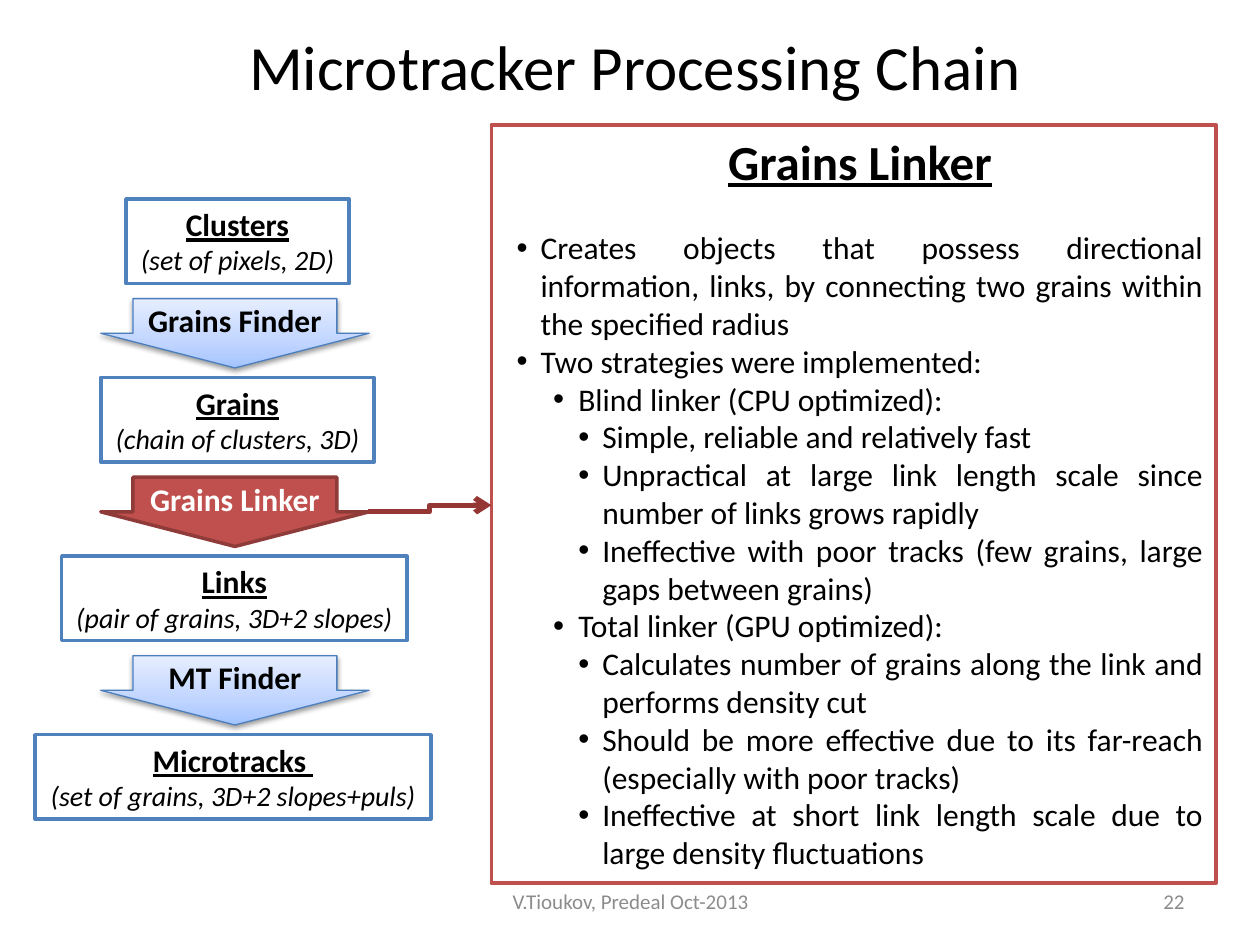
"""Build the Microtracker Processing Chain slide."""
from lxml.etree import SubElement
from pptx import Presentation
from pptx.dml.color import RGBColor
from pptx.enum.shapes import MSO_CONNECTOR, MSO_SHAPE
from pptx.enum.text import MSO_ANCHOR, MSO_AUTO_SIZE, PP_ALIGN
from pptx.oxml.ns import qn
from pptx.util import Inches, Pt

COLORS = {
    "black": "000000", "white": "FFFFFF", "gray": "8C8C8C",
    "blue": "4F81BD", "arrow_blue": "4B7EBC",
    "red": "C0504D", "dark_red": "8E3B39", "connector": "953735",
}
GRADIENT = [(0, "A4C4FF"), (35, "BFD4FF"), (100, "E6EEFF")]
ROW_TOP, ROW_STEP, ARROW_OFFSET = 1.58, 1.417, 0.79
DATA_BOXES = [
    ("Clusters", "(set of pixels, 2D)", 1, 1.77),
    ("Grains", "(chain of clusters, 3D)", 0.8, 2.17),
    ("Links", "(pair of grains, 3D+2 slopes)", 0.49, 2.74),
    ("Microtracks ", "(set of grains, 3D+2 slopes+puls)", 0.28, 3.14),
]
STEPS = [("Grains Finder", False), ("Grains Linker", True), ("MT Finder", False)]
INDENTS = [(0.29, -0.19), (0.59, -0.2), (0.78, -0.19)]
LINKER_POINTS = [
    (0, "Creates objects that possess directional information, links, "
        "by connecting two grains within the specified radius"),
    (0, "Two strategies were implemented:"),
    (1, "Blind linker (CPU optimized):"),
    (2, "Simple, reliable and relatively fast"),
    (2, "Unpractical at large link length scale since number of links grows rapidly"),
    (2, "Ineffective with poor tracks (few grains, large gaps between grains)"),
    (1, "Total linker (GPU optimized):"),
    (2, "Calculates number of grains along the link and performs density cut"),
    (2, "Should be more effective due to its far-reach (especially with poor tracks)"),
    (2, "Ineffective at short link length scale due to large density fluctuations"),
]


def rgb(name):
    """Return the named colour."""
    return RGBColor.from_string(COLORS[name])


def write(para, text, size=18, color="black", bold=False, italic=False,
          underline=False, align=PP_ALIGN.CENTER):
    """Add a formatted span of text to a paragraph."""
    para.alignment = align
    para.space_before = Pt(0)
    span = para.add_run()
    span.text = text
    font = span.font
    font.name, font.size = "Calibri", Pt(size)
    font.bold, font.italic, font.underline = bold, italic, underline
    font.color.rgb = rgb(color)


def place(shape, left, top, width, height):
    """Move and size a shape, in inches."""
    shape.left, shape.top = Inches(left), Inches(top)
    shape.width, shape.height = Inches(width), Inches(height)


def paint(shape, fill, line, width=2):
    """Give a shape a solid fill and an outline."""
    shape.fill.solid()
    shape.fill.fore_color.rgb = rgb(fill)
    shape.line.color.rgb = rgb(line)
    shape.line.width = Pt(width)


def set_indent(para, level, bullet):
    """Set the level, hanging indent and bullet of a paragraph."""
    para.level = level
    margin, hanging = INDENTS[level]
    properties = para._p.get_or_add_pPr()
    properties.set("marL", str(Inches(margin)))
    properties.set("indent", str(Inches(hanging)))
    if bullet:
        SubElement(properties, qn("a:buFont"), typeface="Arial")
        SubElement(properties, qn("a:buChar"), char="•")
    else:
        SubElement(properties, qn("a:buNone"))


def add_shape(page, kind, left, top, width, height):
    """Add a preset shape without a shadow."""
    shape = page.shapes.add_shape(
        kind, Inches(left), Inches(top), Inches(width), Inches(height))
    shape.shadow.inherit = False
    return shape


def add_data_box(page, name, detail, left, top, width):
    """Add an outlined box with a data type and its description."""
    box = add_shape(page, MSO_SHAPE.RECTANGLE, left, top, width, 0.67)
    paint(box, "white", "blue")
    frame = box.text_frame
    frame.word_wrap = False
    frame.vertical_anchor = MSO_ANCHOR.TOP
    write(frame.paragraphs[0], name, bold=True, underline=True)
    write(frame.add_paragraph(), detail, size=16, italic=True)


def add_glow(arrow):
    """Give an arrow the blue gradient and a soft shadow."""
    arrow.fill.gradient()
    arrow.fill.gradient_angle = 90
    properties = arrow._element.spPr
    stops = properties.find(".//" + qn("a:gsLst"))
    for stop in list(stops):
        stops.remove(stop)
    for position, color in GRADIENT:
        stop = SubElement(stops, qn("a:gs"), pos=str(position * 1000))
        SubElement(stop, qn("a:srgbClr"), val=color)
    shadow = SubElement(
        properties.find(qn("a:effectLst")), qn("a:outerShdw"),
        blurRad=str(Pt(3.1)), dist=str(Pt(1.6)), dir="5400000", rotWithShape="0")
    shade = SubElement(shadow, qn("a:srgbClr"), val=COLORS["black"])
    SubElement(shade, qn("a:alpha"), val="38000")


def add_step(page, name, top, active):
    """Add a processing step as a down arrow."""
    arrow = add_shape(page, MSO_SHAPE.DOWN_ARROW, 0.8, top, 2.13, 0.55)
    arrow.adjustments[0], arrow.adjustments[1] = 0.76, 0.5
    if active:
        paint(arrow, "red", "dark_red")
    else:
        paint(arrow, "white", "arrow_blue", 0.75)
        add_glow(arrow)
    frame = arrow.text_frame
    frame.word_wrap = True
    frame.vertical_anchor = MSO_ANCHOR.MIDDLE
    write(frame.paragraphs[0], name, bold=True, color="white" if active else "black")


def fill_panel(panel):
    """Turn the body placeholder into the outlined linker description."""
    place(panel, 3.9, 0.99, 5.75, 6.02)
    paint(panel, "white", "red")
    frame = panel.text_frame
    frame.auto_size = MSO_AUTO_SIZE.NONE
    frame.vertical_anchor = MSO_ANCHOR.TOP
    heading = frame.paragraphs[0]
    set_indent(heading, 0, bullet=False)
    write(heading, "Grains Linker", size=28, bold=True, underline=True)
    heading.space_after = Pt(22)
    for level, text in LINKER_POINTS:
        para = frame.add_paragraph()
        set_indent(para, level, bullet=True)
        write(para, text, align=PP_ALIGN.JUSTIFY)


def add_link(page):
    """Add the elbow arrow from the linker step to the panel."""
    link = page.shapes.add_connector(
        MSO_CONNECTOR.ELBOW, Inches(2.92), Inches(4.06), Inches(3.9), Inches(4.01))
    link.line.color.rgb = rgb("connector")
    link.line.width = Pt(3)
    SubElement(link.line._get_or_add_ln(), qn("a:tailEnd"), type="arrow")
    SubElement(link._element.spPr, qn("a:effectLst"))


def add_footer(page, text, left, width, align):
    """Add a small gray text at the foot of the page."""
    box = page.shapes.add_textbox(Inches(left), Inches(6.95), Inches(width), Inches(0.4))
    box.text_frame.word_wrap = True
    box.text_frame.vertical_anchor = MSO_ANCHOR.MIDDLE
    write(box.text_frame.paragraphs[0], text, size=12, color="gray", align=align)


def main():
    """Build and save the deck."""
    deck = Presentation()
    deck.slide_width, deck.slide_height = Inches(10), Inches(7.5)
    page = deck.slides.add_slide(deck.slide_layouts[1])
    title, panel = page.placeholders
    place(title, 1.77, -0.03, 6.54, 1.09)
    title.text_frame.vertical_anchor = MSO_ANCHOR.MIDDLE
    write(title.text_frame.paragraphs[0], "Microtracker Processing Chain", size=36)
    fill_panel(panel)
    for row, (name, detail, left, width) in enumerate(DATA_BOXES):
        add_data_box(page, name, detail, left, ROW_TOP + row * ROW_STEP, width)
    for row, (name, active) in enumerate(STEPS):
        add_step(page, name, ROW_TOP + ARROW_OFFSET + row * ROW_STEP, active)
    add_link(page)
    add_footer(page, "V.Tioukov, Predeal Oct-2013", 3.42, 3.17, PP_ALIGN.CENTER)
    add_footer(page, "22", 7.17, 2.33, PP_ALIGN.RIGHT)
    deck.save("out.pptx")


if __name__ == "__main__":
    main()
